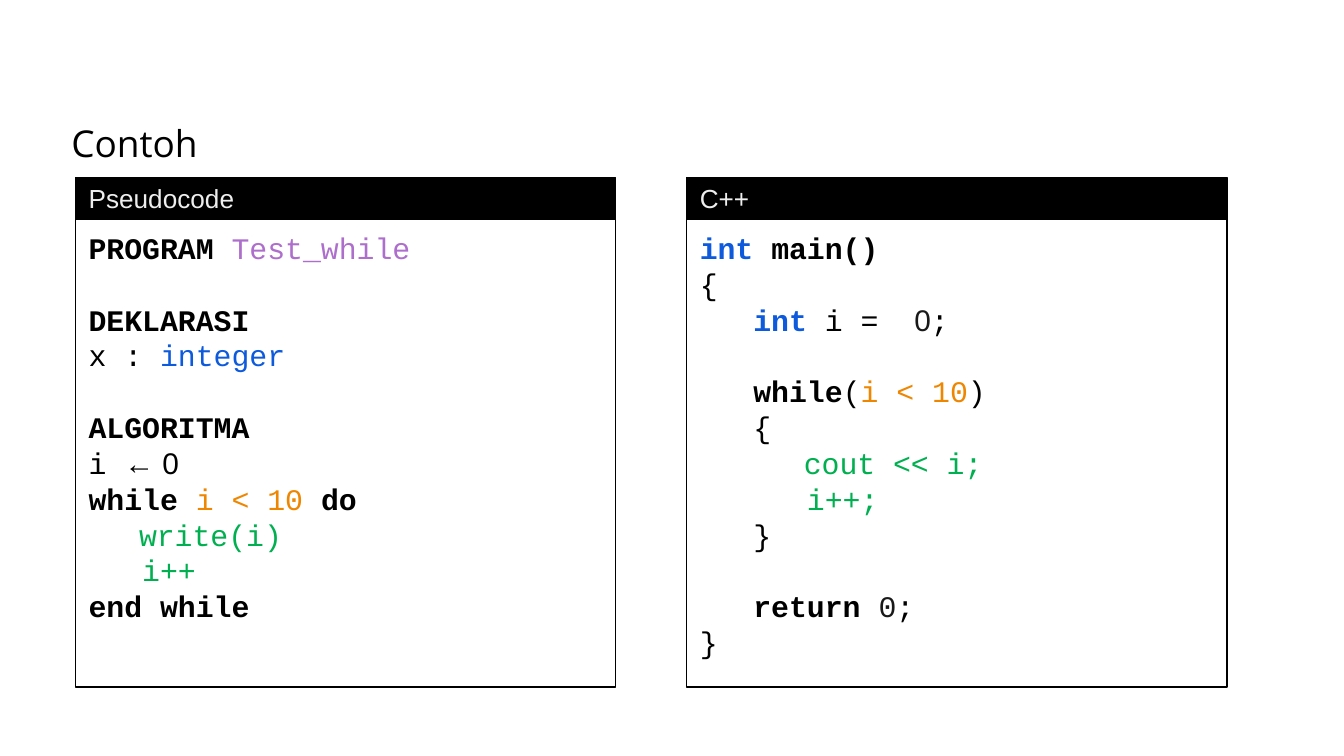
import pptx
import pptx.dml.color
import pptx.enum.shapes
import pptx.enum.text
import pptx.util

Pt = pptx.util.Pt
RGBColor = pptx.dml.color.RGBColor
Anchor = pptx.enum.text.MSO_ANCHOR

BLACK = RGBColor(0x00, 0x00, 0x00)
LIGHT = RGBColor(0xEE, 0xEE, 0xEE)
CHARCOAL = RGBColor(0x19, 0x19, 0x19)
PURPLE = RGBColor(0xAE, 0x6F, 0xCC)
BLUE = RGBColor(0x0D, 0x5B, 0xDC)
ORANGE = RGBColor(0xEF, 0x86, 0x00)
GREEN = RGBColor(0x00, 0xB0, 0x50)

CODE_FONT, LABEL_FONT, TITLE_FONT = "Courier New", "Arial", "Open Sans"

PLAIN = (BLACK, False, CODE_FONT)
KEYWORD = (BLACK, True, CODE_FONT)
NAME = (PURPLE, False, CODE_FONT)
TYPE = (BLUE, False, CODE_FONT)
BOLD_TYPE = (BLUE, True, CODE_FONT)
CONDITION = (ORANGE, False, CODE_FONT)
ACTION = (GREEN, False, CODE_FONT)
SYMBOL = (BLACK, False, LABEL_FONT)
NUMBER = (CHARCOAL, False, LABEL_FONT)
RETURNED = (CHARCOAL, False, CODE_FONT)

PSEUDOCODE = [
    [("PROGRAM ", KEYWORD), ("Test_while", NAME)],
    [],
    [("DEKLARASI", KEYWORD)],
    [("x : ", PLAIN), ("integer", TYPE)],
    [],
    [("ALGORITMA", KEYWORD)],
    [("i ", PLAIN), ("← 0", SYMBOL)],
    [("while ", KEYWORD), ("i < 10 ", CONDITION), ("do", KEYWORD)],
    [("\twrite(i)", ACTION)],
    [("   i++", ACTION)],
    [("end while", KEYWORD)],
]
CPP = [
    [("int ", BOLD_TYPE), ("main()", KEYWORD)],
    [("{", PLAIN)],
    [("   int ", BOLD_TYPE), ("i =  ", PLAIN), ("0", NUMBER), (";", PLAIN)],
    [],
    [("   while", KEYWORD), ("(", PLAIN), ("i < 10", CONDITION), (")", PLAIN)],
    [("   {", PLAIN)],
    [("\t   cout << i;", ACTION)],
    [("      i++;", ACTION)],
    [("   }", PLAIN)],
    [],
    [("   return ", KEYWORD), ("0", RETURNED), (";", PLAIN)],
    [("}", PLAIN)],
]


class CodeSlide:
    code_size = Pt(16)
    label_size = Pt(14)
    line_height = Pt(19.2)
    indent = Pt(27)
    panel_width = Pt(289.5)
    label_top, label_height = Pt(95.2), Pt(22.2)
    code_height = Pt(250.6)

    def __init__(self, presentation):
        self.slide = presentation.slides.add_slide(presentation.slide_layouts[5])

    def title(self, text):
        heading = self.slide.shapes.title
        heading.left, heading.top = Pt(31), Pt(58.3)
        heading.width, heading.height = Pt(658), Pt(31)
        frame = heading.text_frame
        frame.text = text
        frame.auto_size = pptx.enum.text.MSO_AUTO_SIZE.NONE
        frame.vertical_anchor = Anchor.TOP
        frame.margin_left = frame.margin_right = Pt(7.2)
        frame.margin_top = frame.margin_bottom = Pt(6)
        paragraph = frame.paragraphs[0]
        paragraph.alignment = pptx.enum.text.PP_ALIGN.LEFT
        self.style(paragraph.runs[0], Pt(19.8), BLACK, False, TITLE_FONT)

    def style(self, run, size, color, bold, font):
        run.font.size = size
        run.font.color.rgb = color
        run.font.bold = bold
        run.font.name = font

    def box(self, left, top, height):
        box = self.slide.shapes.add_shape(
            pptx.enum.shapes.MSO_SHAPE.RECTANGLE, left, top, self.panel_width, height)
        box.shadow.inherit = False
        box.fill.background()
        box.line.color.rgb = BLACK
        box.line.width = Pt(0.75)
        box.text_frame.word_wrap = True
        box.text_frame.paragraphs[0].alignment = pptx.enum.text.PP_ALIGN.LEFT
        return box

    def label(self, left, text):
        label = self.box(left, self.label_top, self.label_height)
        label.fill.solid()
        label.fill.fore_color.rgb = BLACK
        frame = label.text_frame
        frame.text = text
        frame.word_wrap = False
        frame.vertical_anchor = Anchor.MIDDLE
        self.style(frame.paragraphs[0].runs[0], self.label_size, LIGHT, False, LABEL_FONT)

    def code(self, left, lines):
        top = self.label_top + self.label_height
        frame = self.box(left, top, self.code_height).text_frame
        frame.vertical_anchor = Anchor.TOP
        frame.margin_top = Pt(5.6)
        for number, line in enumerate(lines):
            if not line:
                continue
            paragraph = frame.add_paragraph() if number else frame.paragraphs[0]
            paragraph.alignment = pptx.enum.text.PP_ALIGN.LEFT
            paragraph.line_spacing = self.line_height
            if number and not lines[number - 1]:
                paragraph.space_before = self.line_height
            if line[0][0].startswith("\t"):
                properties = paragraph._p.get_or_add_pPr()
                properties.set("marL", str(self.indent))
                properties.set("indent", str(-self.indent))
            for text, look in line:
                run = paragraph.add_run()
                run.text = text
                self.style(run, self.code_size, *look)

    def panel(self, left, heading, lines):
        self.code(left, lines)
        self.label(left, heading)


def main():
    presentation = pptx.Presentation()
    presentation.slide_width, presentation.slide_height = Pt(720), Pt(405)
    example = CodeSlide(presentation)
    example.title("Contoh")
    example.panel(Pt(40.4), "Pseudocode", PSEUDOCODE)
    example.panel(Pt(367.8), "C++", CPP)
    presentation.save("out.pptx")


if __name__ == "__main__":
    main()
